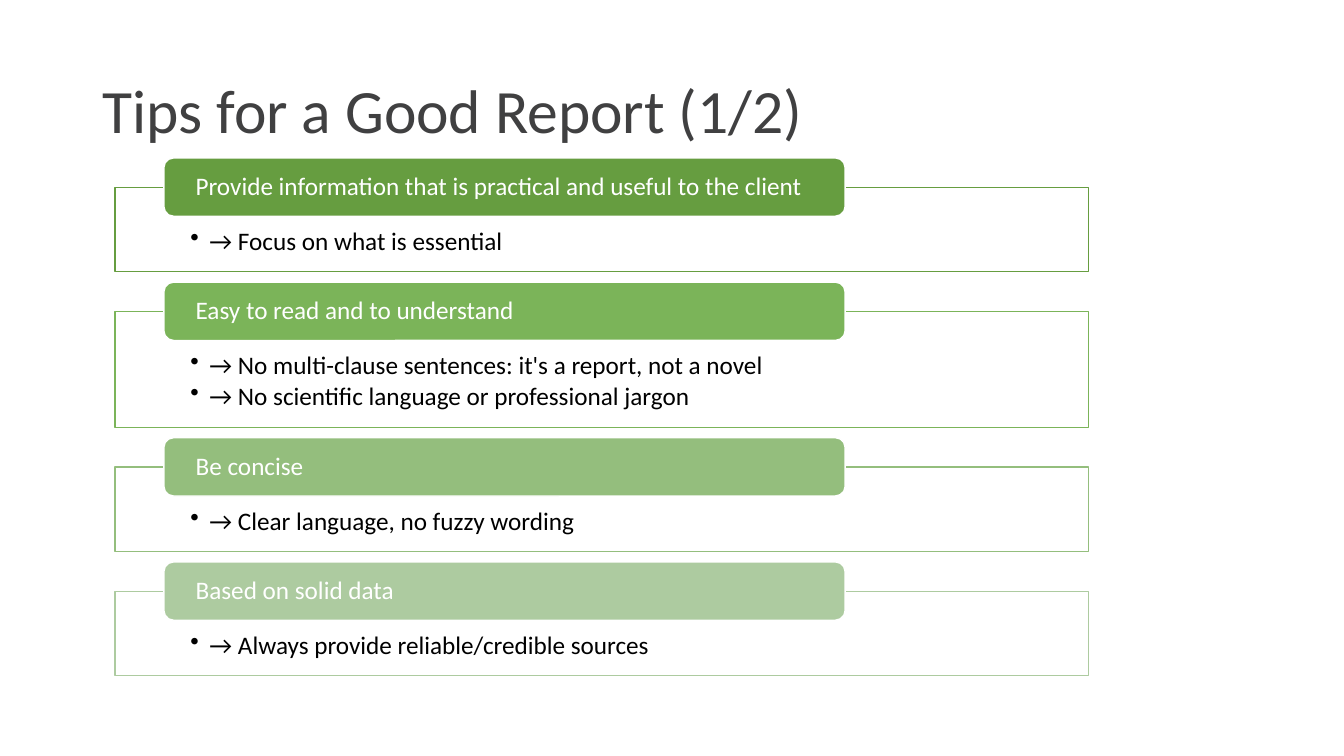
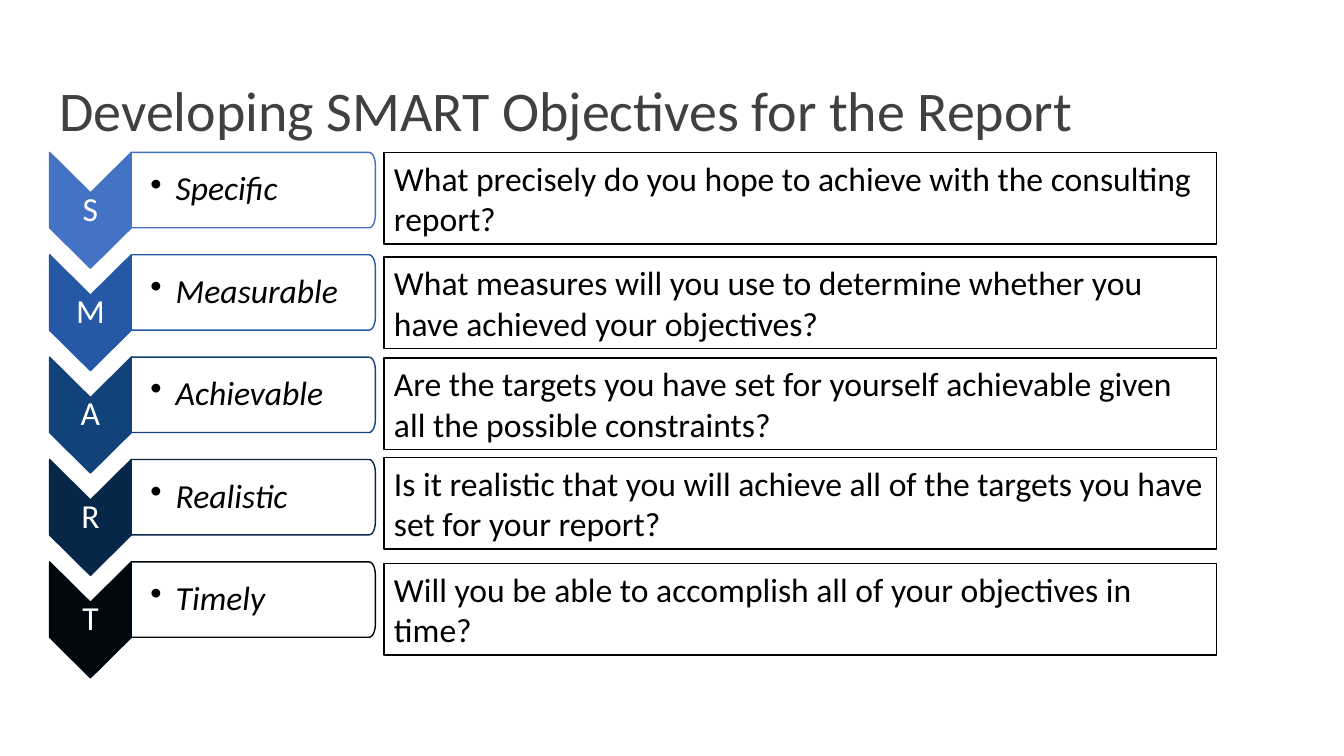
from math import cos, pi, sin

from lxml.etree import SubElement
from pptx import Presentation
from pptx.dml.color import RGBColor
from pptx.enum.shapes import MSO_SHAPE as SHAPE
from pptx.enum.text import MSO_ANCHOR as ANCHOR, PP_ALIGN as ALIGN
from pptx.oxml.ns import qn
from pptx.util import Cm, Pt

FONT = "Calibri"
WHITE = RGBColor(0xFF, 0xFF, 0xFF)
BLACK = RGBColor(0x00, 0x00, 0x00)
TITLE_GREY = RGBColor(0x40, 0x40, 0x41)
GREENS = [RGBColor(0x66, 0x9D, 0x40), RGBColor(0x7B, 0xB4, 0x59),
          RGBColor(0x94, 0xBE, 0x7D), RGBColor(0xAD, 0xCB, 0xA0)]
BLUES = [RGBColor(0x44, 0x72, 0xC4), RGBColor(0x25, 0x59, 0xA5),
         RGBColor(0x12, 0x42, 0x7A), RGBColor(0x06, 0x27, 0x48),
         RGBColor(0x00, 0x08, 0x0F)]
DEFAULT_INSETS = (0.25, 0.13, 0.25, 0.13)

TIPS = [
    ("Provide information that is practical and useful to the client",
     ["→ Focus on what is essential"]),
    ("Easy to read and to understand",
     ["→ No multi-clause sentences: it's a report, not a novel",
      "→ No scientific language or professional jargon"]),
    ("Be concise", ["→ Clear language, no fuzzy wording"]),
    ("Based on solid data", ["→ Always provide reliable/credible sources"]),
]
OBJECTIVES = [
    ("Specific", 3.84,
     "What precisely do you hope to achieve with the consulting report?"),
    ("Measurable", 6.48,
     "What measures will you use to determine whether you have achieved "
     "your objectives?"),
    ("Achievable", 9.02,
     "Are the targets you have set for yourself achievable given all the "
     "possible constraints?"),
    ("Realistic", 11.53,
     "Is it realistic that you will achieve all of the targets you have set "
     "for your report?"),
    ("Timely", 14.2,
     "Will you be able to accomplish all of your objectives in time?"),
]


def style_shape(sp, fill, line):
    sp.shadow.inherit = False
    sp.fill.solid()
    sp.fill.fore_color.rgb = fill
    sp.line.color.rgb = line
    sp.line.width = Pt(1)
    return sp


def add_box(slide, kind, left, top, width, height, fill, line):
    sp = slide.shapes.add_shape(kind, Cm(left), Cm(top), Cm(width), Cm(height))
    return style_shape(sp, fill, line)


def add_outline(slide, points, fill, line):
    start, *rest = [(Cm(x), Cm(y)) for x, y in points]
    builder = slide.shapes.build_freeform(*start)
    builder.add_line_segments(rest, close=True)
    return style_shape(builder.convert_to_shape(), fill, line)


def write(sp, lines, size, color, insets=DEFAULT_INSETS, anchor=ANCHOR.MIDDLE,
          align=ALIGN.LEFT, spacing=0.9, after=0, hang=0, italic=False):
    tf = sp.text_frame
    tf.word_wrap = True
    tf.vertical_anchor = anchor
    (tf.margin_left, tf.margin_top,
     tf.margin_right, tf.margin_bottom) = map(Cm, insets)
    tf.text = "\n".join(lines)
    for p in tf.paragraphs:
        if hang:
            pPr = p._p.get_or_add_pPr()
            pPr.set("marL", str(Cm(hang)))
            pPr.set("indent", str(-Cm(hang)))
            SubElement(pPr, qn("a:buChar")).set("char", "•")
        p.alignment = align
        p.line_spacing = spacing
        p.space_after = Pt(after)
        for r in p.runs:
            r.font.name = FONT
            r.font.size = Pt(size)
            r.font.italic = italic
            r.font.color.rgb = color


def add_title(slide, text, left, width, size):
    sp = slide.shapes.add_textbox(Cm(left), Cm(1.01), Cm(width), Cm(3.68))
    write(sp, [text], size, TITLE_GREY)


def add_tip(slide, left, top, width, height, heading, points, color):
    frame = add_box(slide, SHAPE.RECTANGLE, left, top, width, height,
                    WHITE, color)
    write(frame, points, 18, BLACK, (1.9, 1.04, 1.9, 0.36), ANCHOR.TOP,
          after=2.7, hang=0.48)
    pill = add_box(slide, SHAPE.ROUNDED_RECTANGLE, left + 1.23, top - 0.74,
                   17.17, 1.47, color, WHITE)
    write(pill, [heading], 18, WHITE, (0.73, 0, 0.73, 0))


def add_chevron(slide, left, top, width, side, notch, letter, color):
    middle, right = left + width / 2, left + width
    sp = add_outline(slide, [
        (left, top), (middle, top + notch), (right, top),
        (right, top + side), (middle, top + side + notch), (left, top + side),
    ], color, color)
    write(sp, [letter], 24, WHITE, (0.05, notch, 0.05, notch),
          align=ALIGN.CENTER)


def add_tab(slide, left, top, width, height, text, color):
    rx, ry, steps = 0.16, 0.32, 6
    angles = [pi / 2 * i / steps for i in range(steps + 1)]
    x, right_x = left, left + width - rx
    upper = [(right_x + rx * sin(a), top + ry - ry * cos(a)) for a in angles]
    lower = [(px, 2 * top + height - py) for px, py in reversed(upper)]
    sp = add_outline(slide, [(x, top), *upper, *lower, (x, top + height)],
                     WHITE, color)
    write(sp, [text], 24, BLACK, (0.48, 0.13, 0.13, 0.13), hang=0.64,
          italic=True)


def add_question(slide, left, top, width, height, text):
    sp = add_box(slide, SHAPE.RECTANGLE, left, top, width, height,
                 WHITE, BLACK)
    write(sp, [text], 24, BLACK, anchor=ANCHOR.TOP, spacing=1)


def build_tips(slide):
    add_title(slide, "Tips for a Good Report (1/2)", 2.33, 29.21, 44)
    top, gap = 4.72, 1
    for (heading, points), color in zip(TIPS, GREENS):
        height = 1.34 + 0.79 * len(points)
        add_tip(slide, 2.9, top, 24.53, height, heading, points, color)
        top += height + gap


def build_objectives(slide):
    add_title(slide, "Developing SMART Objectives for the Report",
              1.25, 30.28, 40)
    left, top, pitch, chevron_w, side = 1.25, 3.84, 2.58, 2.06, 1.9
    for i, ((name, question_top, question), color) in enumerate(
            zip(OBJECTIVES, BLUES)):
        y = top + i * pitch
        add_chevron(slide, left, y, chevron_w, side, 1.02, name[0], color)
        add_tab(slide, left + chevron_w, y, 6.15, side, name, color)
        add_question(slide, 9.68, question_top, 20.98, 2.31, question)


def main():
    prs = Presentation()
    prs.slide_width, prs.slide_height = Cm(33.87), Cm(19.05)
    for build in (build_tips, build_objectives):
        build(prs.slides.add_slide(prs.slide_layouts[6]))
    prs.save("out.pptx")


if __name__ == "__main__":
    main()
